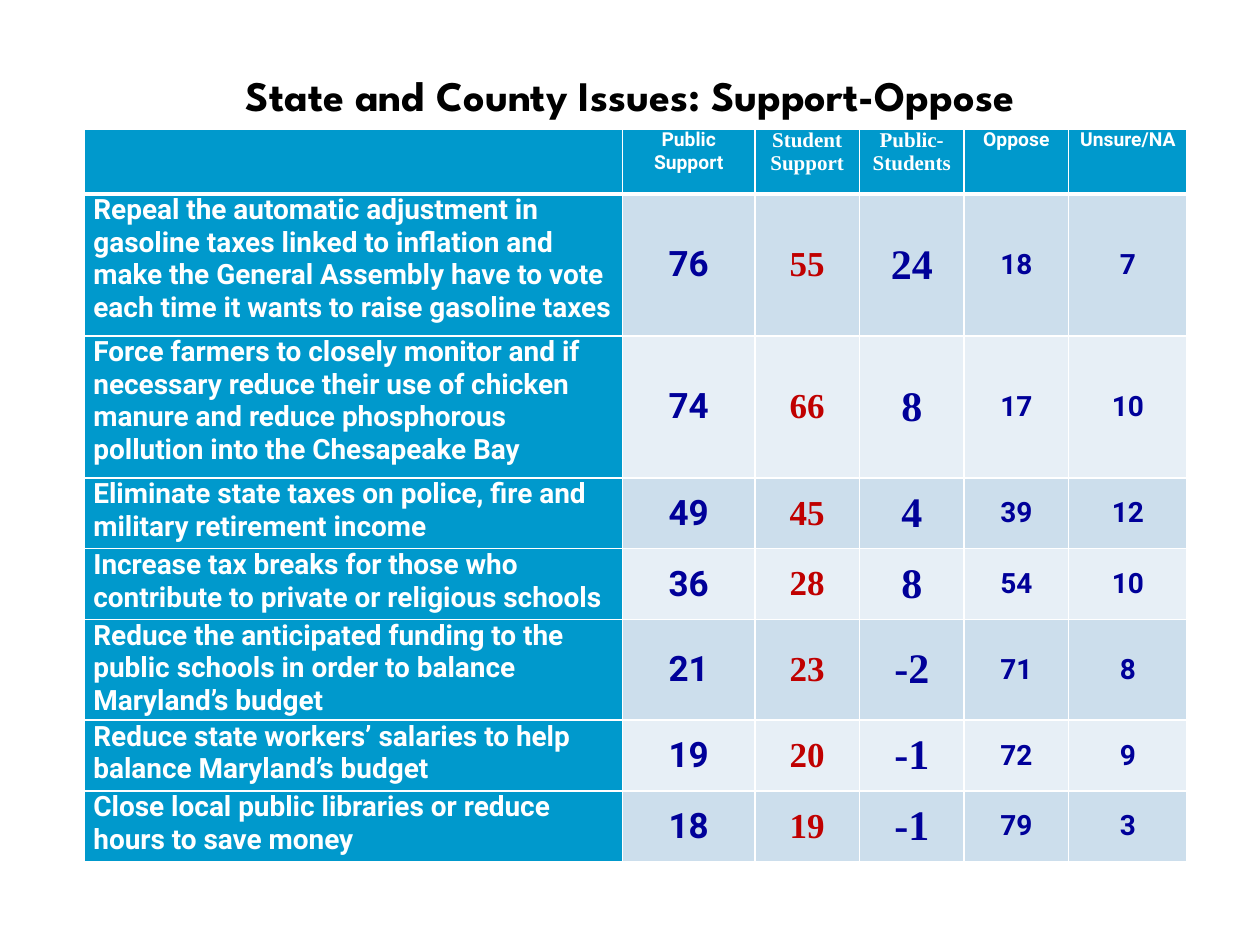
from typing import NamedTuple

from lxml.etree import SubElement
from pptx import Presentation
from pptx.dml.color import RGBColor
from pptx.enum.text import MSO_ANCHOR as Anchor, PP_ALIGN as Align
from pptx.oxml.ns import qn
from pptx.util import Pt

BLACK = RGBColor(0x00, 0x00, 0x00)
WHITE = RGBColor(0xFF, 0xFF, 0xFF)
BLUE = RGBColor(0x00, 0x99, 0xCC)
NAVY = RGBColor(0x00, 0x00, 0x99)
RED = RGBColor(0xC0, 0x00, 0x00)
BANDS = (RGBColor(0xCC, 0xDE, 0xEC), RGBColor(0xE7, 0xEF, 0xF6))

SANS = "Roboto"
SERIF = "Times New Roman"
DISPLAY = "League Spartan"


class Style(NamedTuple):
    size: float
    font: str
    color: RGBColor
    align: Align = Align.CENTER
    anchor: Anchor = Anchor.MIDDLE


class Column(NamedTuple):
    heading: str
    width: float
    heading_style: Style
    body_style: Style


class Issue(NamedTuple):
    text: str
    values: tuple[int, ...]
    height: float = 40.4


SANS_HEADING = Style(11, SANS, WHITE, anchor=Anchor.TOP)
SERIF_HEADING = Style(12, SERIF, WHITE, anchor=Anchor.TOP)
ISSUE_STYLE = Style(16, SANS, WHITE, Align.LEFT, Anchor.TOP)
MINOR_VALUE = Style(16, SANS, NAVY)
TITLE_STYLE = Style(24, DISPLAY, BLACK, anchor=Anchor.BOTTOM)

COLUMNS = (
    Column("", 307.4, SANS_HEADING, ISSUE_STYLE),
    Column("Public\nSupport", 75.6, SANS_HEADING, Style(20, SANS, NAVY)),
    Column("Student Support", 59.8, SERIF_HEADING, Style(20, SERIF, RED)),
    Column("Public-Students", 59.8, SERIF_HEADING, Style(24, SERIF, NAVY)),
    Column("Oppose", 59.8, SANS_HEADING, MINOR_VALUE),
    Column("Unsure/NA", 67.7, SANS_HEADING, MINOR_VALUE),
)
ISSUES = (
    Issue("Repeal the automatic adjustment in gasoline taxes linked to inflation and make "
          "the General Assembly have to vote each time it wants to raise gasoline taxes",
          (76, 55, 24, 18, 7), 81.2),
    Issue("Force farmers to closely monitor and if necessary reduce their use of chicken "
          "manure and reduce phosphorous pollution into the Chesapeake Bay",
          (74, 66, 8, 17, 10), 81.2),
    Issue("Eliminate state taxes on police, fire and military retirement income",
          (49, 45, 4, 39, 12)),
    Issue("Increase tax breaks for those who contribute to private or religious schools",
          (36, 28, 8, 54, 10)),
    Issue("Reduce the anticipated funding to the public schools in order to balance "
          "Maryland’s budget", (21, 23, -2, 71, 8)),
    Issue("Reduce state workers’ salaries to help balance Maryland’s budget",
          (19, 20, -1, 72, 9)),
    Issue("Close local public libraries or reduce hours to save money",
          (18, 19, -1, 79, 3)),
)
HEADER_HEIGHT = 37.2
TABLE_LEFT, TABLE_TOP = 48.4, 73.6


def style_paragraph(para, text: str, style: Style) -> None:
    para.text = text
    para.alignment = style.align
    para.font.size = Pt(style.size)
    para.font.name = style.font
    para.font.bold = True
    para.font.color.rgb = style.color


def add_borders(cell, top: float = 1, bottom: float = 1) -> None:
    properties = cell._tc.get_or_add_tcPr()
    for side, width in (("L", 1), ("R", 1), ("T", top), ("B", bottom)):
        line = SubElement(properties, qn(f"a:ln{side}"), w=str(Pt(width)))
        fill = SubElement(line, qn("a:solidFill"))
        SubElement(fill, qn("a:srgbClr"), val=str(WHITE))


def fill_cell(cell, text: str, style: Style, color: RGBColor) -> None:
    cell.margin_left = cell.margin_right = Pt(5)
    cell.margin_top = cell.margin_bottom = 0
    cell.vertical_anchor = style.anchor
    cell.fill.solid()
    cell.fill.fore_color.rgb = color
    style_paragraph(cell.text_frame.paragraphs[0], text, style)


def add_title(page, text: str) -> None:
    box = page.shapes.add_textbox(Pt(36), Pt(26.6), Pt(648), Pt(45.4))
    frame = box.text_frame
    frame.word_wrap = True
    frame.vertical_anchor = TITLE_STYLE.anchor
    style_paragraph(frame.paragraphs[0], text, TITLE_STYLE)


def add_issue_table(page) -> None:
    heights = [HEADER_HEIGHT] + [issue.height for issue in ISSUES]
    table = page.shapes.add_table(
        len(heights), len(COLUMNS), Pt(TABLE_LEFT), Pt(TABLE_TOP),
        Pt(sum(column.width for column in COLUMNS)), Pt(sum(heights)),
    ).table
    table.horz_banding = False
    for row, height in zip(table.rows, heights):
        row.height = Pt(height)

    for col, column in enumerate(COLUMNS):
        table.columns[col].width = Pt(column.width)
        heading = table.cell(0, col)
        add_borders(heading, bottom=3)
        fill_cell(heading, column.heading, column.heading_style, BLUE)
        for row, issue in enumerate(ISSUES, start=1):
            cell = table.cell(row, col)
            add_borders(cell, top=3 if row == 1 else 1)
            text = str((issue.text, *issue.values)[col])
            color = BLUE if col == 0 else BANDS[(row - 1) % 2]
            fill_cell(cell, text, column.body_style, color)


def main() -> None:
    deck = Presentation()
    deck.slide_width, deck.slide_height = Pt(720), Pt(540)
    page = deck.slides.add_slide(deck.slide_layouts[6])
    add_title(page, "State and County Issues: Support-Oppose")
    add_issue_table(page)
    deck.save("out.pptx")


if __name__ == "__main__":
    main()
